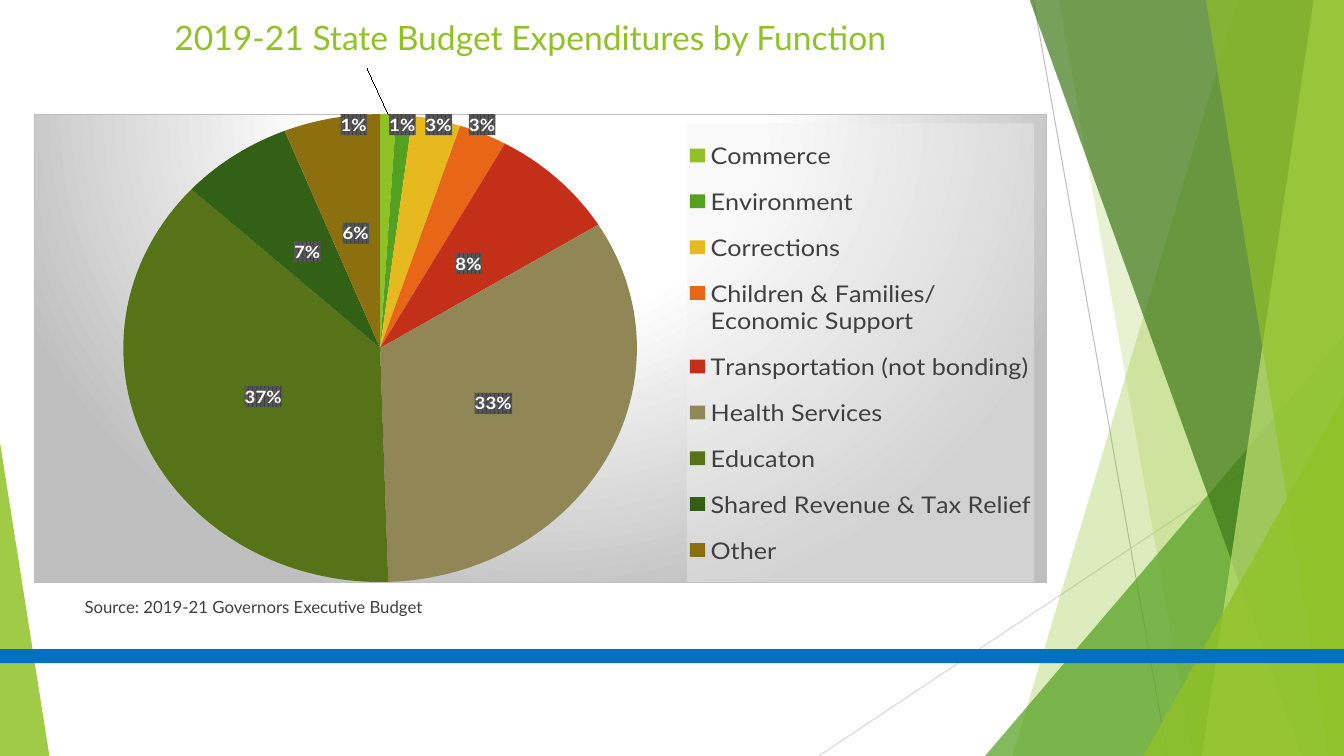
from copy import deepcopy
from dataclasses import dataclass

import pptx
import pptx.chart.data
import pptx.dml.color
import pptx.enum.chart
import pptx.enum.shapes
import pptx.enum.text
import pptx.oxml
import pptx.oxml.ns
import pptx.util
from pptx.util import Inches

COLORS = {
    "lime": "90C226", "green": "54A021", "forest": "3F7819", "pale": "C0E474",
    "gold": "E6B91E", "orange": "E76618", "red": "C42F1A", "khaki": "918655",
    "olive": "567417", "pine": "326014", "bronze": "8C7010", "blue": "0070C0",
    "text": "404040", "gray": "BFBFBF", "silver": "D9D9D9", "white": "FFFFFF",
    "black": "000000", "stripe": "595959", "panel": "F2F2F2",
}
WIDTH, HEIGHT = 13.33, 7.5
TOP = -0.01
FONT = "Lato"
NS = pptx.oxml.ns.nsdecls("c", "a")


@dataclass
class Ray:
    """A thin line behind the facets."""
    start: tuple[float, float]
    end: tuple[float, float]
    color: str


@dataclass
class Shard:
    """A facet reaching from its slanted left edge to the right slide edge."""
    top_left: float
    bottom_left: float
    color: str
    opacity: int


@dataclass
class Wedge:
    """A right triangle standing on the bottom slide edge."""
    left: float
    top: float
    width: float
    apex: float
    color: str
    opacity: int


@dataclass
class Expenditure:
    """A pie slice with an optional shift of its label from the slice centre."""
    function: str
    share: int
    color: str
    label_shift: tuple[float, float] | None = None


RAYS = [
    Ray((10.25, 0), (11.58, HEIGHT), "gray"),
    Ray((WIDTH, 4.03), (8.12, HEIGHT), "silver"),
]
FACETS = [
    Shard(12.28, 10.04, "lime", 30),
    Shard(10.5, 11.83, "lime", 20),
    Wedge(9.77, 3.33, 3.56, 1, "green", 72),
    Shard(10.21, 12.91, "forest", 70),
    Shard(13.03, 11.92, "pale", 70),
    Shard(11.96, 13.18, "lime", 65),
    Wedge(11.34, 3.93, 1.99, 1, "lime", 80),
    Wedge(0, 4.39, 0.49, 0, "lime", 85),
]
EXPENDITURES = [
    Expenditure("Commerce", 1, "lime", (-0.03, -0.37)),
    Expenditure("Environment", 1, "green", (0.01, -0.23)),
    Expenditure("Corrections", 3, "gold", (0.03, -0.24)),
    Expenditure("Children & Families/ Economic Support", 3, "orange", (0.05, -0.25)),
    Expenditure("Transportation (not bonding)", 8, "red"),
    Expenditure("Health Services", 33, "khaki"),
    Expenditure("Educaton", 37, "olive"),
    Expenditure("Shared Revenue & Tax Relief", 7, "pine"),
    Expenditure("Other", 6, "bronze"),
]


def rgb(name: str) -> pptx.dml.color.RGBColor:
    """Return the named colour."""
    return pptx.dml.color.RGBColor.from_string(COLORS[name])


def paint(shape, color: str, opacity: int = 100) -> None:
    """Fill a shape without outline or shadow."""
    shape.shadow.inherit = False
    shape.line.fill.background()
    shape.fill.solid()
    shape.fill.fore_color.rgb = rgb(color)
    if opacity < 100:
        srgb = shape.fill._xPr.find(".//" + pptx.oxml.ns.qn("a:srgbClr"))
        srgb.append(pptx.oxml.parse_xml(f'<a:alpha {NS} val="{opacity * 1000}"/>'))


def style_font(font, size: float, color: str, bold: bool = False) -> None:
    """Set the typeface, size, colour and weight of a font."""
    font.name, font.size, font.bold = FONT, pptx.util.Pt(size), bold
    font.color.rgb = rgb(color)


def draw_ray(shapes, ray: Ray) -> None:
    """Draw one thin background line."""
    line = shapes.add_connector(
        pptx.enum.shapes.MSO_CONNECTOR.STRAIGHT,
        *(Inches(value) for value in ray.start + ray.end))
    line.line.color.rgb = rgb(ray.color)
    line.line.width = pptx.util.Pt(0.75)
    line._element.spPr.append(pptx.oxml.parse_xml(f"<a:effectLst {NS}/>"))


def draw_facet(shapes, facet: Shard | Wedge) -> None:
    """Draw one translucent facet."""
    if isinstance(facet, Shard):
        builder = shapes.build_freeform(Inches(facet.top_left), Inches(TOP))
        corners = [(WIDTH, TOP), (WIDTH, HEIGHT), (facet.bottom_left, HEIGHT)]
        builder.add_line_segments([(Inches(x), Inches(y)) for x, y in corners])
        shape = builder.convert_to_shape()
    else:
        shape = shapes.add_shape(
            pptx.enum.shapes.MSO_SHAPE.ISOSCELES_TRIANGLE, Inches(facet.left),
            Inches(facet.top), Inches(facet.width), Inches(HEIGHT - facet.top))
        shape.adjustments[0] = facet.apex
    paint(shape, facet.color, facet.opacity)


def write(box, text: str, bounds: tuple[float, ...], size: float, color: str) -> None:
    """Place a box and set its left-aligned text."""
    box.left, box.top, box.width, box.height = (Inches(value) for value in bounds)
    box.text_frame.word_wrap = True
    box.text_frame.text = text
    paragraph = box.text_frame.paragraphs[0]
    paragraph.alignment = pptx.enum.text.PP_ALIGN.LEFT
    style_font(paragraph.runs[0].font, size, color)


def manual_layout(x: float, y: float, size: tuple[float, float] | None = None,
                  inner: bool = False, edge: bool = True):
    """Build a chart layout element from fractions of the chart size."""
    target = '<c:layoutTarget val="inner"/>' if inner else ""
    modes = '<c:xMode val="edge"/><c:yMode val="edge"/>' if edge else ""
    extent = f'<c:w val="{size[0]}"/><c:h val="{size[1]}"/>' if size else ""
    return pptx.oxml.parse_xml(
        f'<c:layout {NS}><c:manualLayout>{target}{modes}<c:x val="{x}"/>'
        f'<c:y val="{y}"/>{extent}</c:manualLayout></c:layout>')


def chart_properties(content: str):
    """Build a chart shape-property element."""
    return pptx.oxml.parse_xml(f"<c:spPr {NS}>{content}</c:spPr>")


def solid(name: str, extra: str = "") -> str:
    """Return solid-fill markup."""
    return f'<a:solidFill><a:srgbClr val="{COLORS[name]}">{extra}</a:srgbClr></a:solidFill>'


def label_slices(series) -> None:
    """Show percentages and shift the labels of the narrow slices."""
    labels = series.data_labels
    labels.show_value, labels.show_percentage = False, True
    labels.position = pptx.enum.chart.XL_LABEL_POSITION.CENTER
    style_font(labels.font, 13.3, "white", True)
    root, qn = labels._element, pptx.oxml.ns.qn
    root.find(qn("c:txPr")).addprevious(chart_properties(
        f'<a:pattFill prst="pct75"><a:fgClr><a:srgbClr val="{COLORS["text"]}"/></a:fgClr>'
        f'<a:bgClr><a:srgbClr val="{COLORS["stripe"]}"/></a:bgClr></a:pattFill>'))
    shared = [deepcopy(part) for part in root if part.tag != qn("c:showLeaderLines")]
    shifted = [(i, e.label_shift) for i, e in enumerate(EXPENDITURES) if e.label_shift]
    for position, (index, shift) in enumerate(shifted):
        label = pptx.oxml.parse_xml(f'<c:dLbl {NS}><c:idx val="{index}"/></c:dLbl>')
        label.append(manual_layout(*shift, edge=False))
        label.extend(deepcopy(shared))
        root.insert(position, label)


def draw_pie(shapes) -> None:
    """Draw the expenditure pie with its legend."""
    data = pptx.chart.data.CategoryChartData()
    data.categories = [item.function for item in EXPENDITURES]
    data.add_series("Series 1", [item.share for item in EXPENDITURES])
    chart = shapes.add_chart(
        pptx.enum.chart.XL_CHART_TYPE.PIE, Inches(0.34), Inches(0.68),
        Inches(10.04), Inches(5.1), data).chart
    chart.has_title = False
    style_font(chart.font, 10, "black")
    chart.plots[0].vary_by_categories = True
    series = chart.plots[0].series[0]
    for index, item in enumerate(EXPENDITURES):
        fill = series.points[index].format.fill
        fill.solid()
        fill.fore_color.rgb = rgb(item.color)
    label_slices(series)

    chart.has_legend = True
    legend = chart.legend
    legend.position = pptx.enum.chart.XL_LEGEND_POSITION.RIGHT
    legend.include_in_layout = False
    style_font(legend.font, 18, "text")
    qn = pptx.oxml.ns.qn
    for old in legend._element.findall(qn("c:layout")):
        legend._element.remove(old)
    legend._element.find(qn("c:legendPos")).addnext(
        manual_layout(0.645, 0.02, (0.343, 0.98)))
    legend._element.find(qn("c:txPr")).addprevious(
        chart_properties(solid("panel", '<a:alpha val="39000"/>')))

    plot_area = chart.element.chart.plotArea
    for old in plot_area.findall(qn("c:layout")):
        plot_area.remove(old)
    plot_area.insert(0, manual_layout(0, 0, (0.683, 1), inner=True))
    stops = "".join(
        f'<a:gs pos="{at * 1000}"><a:srgbClr val="{COLORS[name]}"/></a:gs>'
        for at, name in [(0, "white"), (39, "white"), (100, "gray")])
    chart.element.chart.addnext(chart_properties(
        f'<a:gradFill><a:gsLst>{stops}</a:gsLst><a:path path="circle">'
        '<a:fillToRect l="50000" t="-80000" r="50000" b="180000"/></a:path></a:gradFill>'
        f'<a:ln w="9525">{solid("gray")}</a:ln>'))


def main() -> None:
    """Build and save the budget slide."""
    deck = pptx.Presentation()
    deck.slide_width, deck.slide_height = Inches(WIDTH), Inches(HEIGHT)
    slide = deck.slides.add_slide(deck.slide_layouts[5])
    shapes = slide.shapes
    for ray in RAYS:
        draw_ray(shapes, ray)
    for facet in FACETS:
        draw_facet(shapes, facet)
    band = shapes.add_shape(pptx.enum.shapes.MSO_SHAPE.RECTANGLE, 0, Inches(6.44),
                            Inches(WIDTH), Inches(0.14))
    paint(band, "blue")
    title = shapes.title
    write(title, "2019-21 State Budget Expenditures by Function",
          (1.63, 0, 7.81, 0.62), 24, "lime")
    title.text_frame.vertical_anchor = pptx.enum.text.MSO_ANCHOR.BOTTOM
    source = shapes.add_textbox(0, 0, 0, 0)
    write(source, "Source: 2019-21 Governors Executive Budget",
          (0.74, 5.87, 9.4, 0.74), 12, "text")
    draw_pie(shapes)
    deck.save("out.pptx")


if __name__ == "__main__":
    main()
